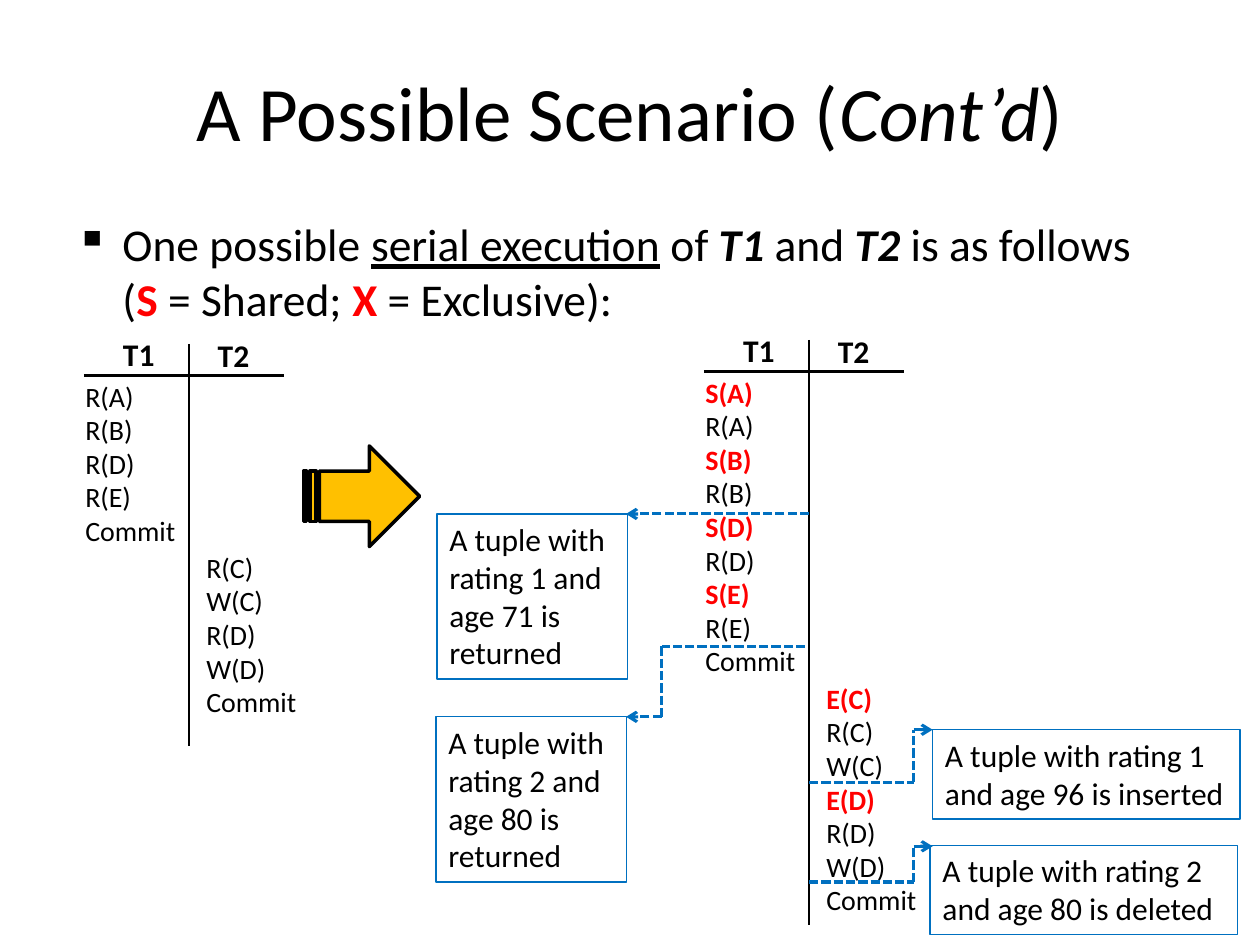
import pptx
import pptx.util
import pptx.dml.color
import pptx.enum.dml
import pptx.enum.shapes
import pptx.enum.text
import pptx.oxml
import pptx.oxml.ns
from itertools import pairwise

Cm, Pt = pptx.util.Cm, pptx.util.Pt
BLACK, RED, BLUE, AMBER = "000000", "FF0000", "0070C0", "FFC000"
BREAK = ("\n", {})

# Content: a paragraph is a list of (text, format values)
title = [("A Possible Scenario (", {}), ("Cont’d", {"italic": True}), (")", {})]
statement = [
    ("One possible ", {}), ("serial execution", {"underline": True}), (" of ", {}),
    ("T1", {"bold": True, "italic": True}), (" and ", {}),
    ("T2", {"bold": True, "italic": True}), (" is as follows ", {}), BREAK,
    ("(", {}), ("S", {"bold": True, "color": RED}), (" = Shared; ", {}),
    ("X", {"bold": True, "color": RED}), (" = Exclusive):", {}),
]
# Schedules: divider x, header line y, divider bottom, T1 steps, T2 steps
schedules = [
    (3.81, 7.57, 15.04, "R(A) R(B) R(D) R(E) Commit", "R(C) W(C) R(D) W(D) Commit"),
    (16.31, 7.49, 18.64, "S(A) R(A) S(B) R(B) S(D) R(D) S(E) R(E) Commit",
     "E(C) R(C) W(C) E(D) R(D) W(D) Commit"),
]
# Notes: left, top, width, height, paragraphs
notes = [
    (8.81, 10.36, 3.84, 3.33, [[("A tuple with ", {}), BREAK, ("rating 1 and ", {}), BREAK,
                                ("age 71 is ", {}), BREAK, ("returned", {})]]),
    (8.79, 14.45, 3.84, 3.33, [[("A tuple with ", {}), BREAK, ("rating 2 and ", {}), BREAK,
                                ("age 80 is ", {}), BREAK, ("returned", {})]]),
    (18.8, 14.71, 6.2, 1.8, [[("A tuple with rating 1", {})], [("and age 96 is inserted", {})]]),
    (18.75, 17.04, 6.2, 1.8, [[("A tuple with rating 2", {})], [("and age 80 is deleted", {})]]),
]
# Dashed routes from a schedule to a note
routes = [
    [(16.31, 10.36), (12.62, 10.36)],
    [(16.23, 13.03), (13.34, 13.03), (13.34, 14.45), (12.62, 14.45)],
    [(16.31, 15.77), (18.42, 15.77), (18.42, 14.71), (18.8, 14.71)],
    [(16.31, 17.78), (18.42, 17.78), (18.42, 17.06), (18.8, 17.06)],
]
STEP_HEIGHT = 0.68

presentation = pptx.Presentation()
presentation.slide_width, presentation.slide_height = Cm(25.4), Cm(19.05)
slide = presentation.slides.add_slide(presentation.slide_layouts[6])


def rgb(value):
    return pptx.dml.color.RGBColor.from_string(value)


def write(shape, paragraphs, size, wrap=False, anchor="TOP", align="LEFT"):
    frame = shape.text_frame
    frame.word_wrap = wrap
    frame.vertical_anchor = getattr(pptx.enum.text.MSO_ANCHOR, anchor)
    for index, pieces in enumerate(paragraphs):
        paragraph = frame.add_paragraph() if index else frame.paragraphs[0]
        paragraph.alignment = getattr(pptx.enum.text.PP_ALIGN, align)
        for text, formats in pieces:
            if text == "\n":
                paragraph.add_line_break()
                continue
            run = paragraph.add_run()
            run.text = text
            values = {"name": "Calibri", "size": Pt(size), "color": BLACK, **formats}
            run.font.color.rgb = rgb(values.pop("color"))
            for key, value in values.items():
                setattr(run.font, key, value)


def add_text(left, top, width, height, paragraphs, size, **options):
    box = slide.shapes.add_textbox(Cm(left), Cm(top), Cm(width), Cm(height))
    write(box, paragraphs, size, **options)
    return box


def add_shape(kind, left, top, width, height, line, weight, fill=None):
    shape = slide.shapes.add_shape(
        getattr(pptx.enum.shapes.MSO_SHAPE, kind), Cm(left), Cm(top), Cm(width), Cm(height))
    shape.shadow.inherit = False
    shape.line.color.rgb = rgb(line)
    shape.line.width = Pt(weight)
    if fill:
        shape.fill.solid()
        shape.fill.fore_color.rgb = rgb(fill)
    else:
        shape.fill.background()
    return shape


def add_line(start, end, color=BLACK, weight=1.5, dashed=False, arrow=False):
    line = slide.shapes.add_connector(
        pptx.enum.shapes.MSO_CONNECTOR.STRAIGHT, *(Cm(v) for v in (*start, *end)))
    line.line.color.rgb = rgb(color)
    line.line.width = Pt(weight)
    if dashed:
        line.line.dash_style = pptx.enum.dml.MSO_LINE.SQUARE_DOT
    if arrow:
        tail = pptx.oxml.parse_xml(
            f'<a:tailEnd {pptx.oxml.ns.nsdecls("a")} type="arrow"/>')
        line.line._get_or_add_ln().append(tail)
    line._element.spPr.append(
        pptx.oxml.parse_xml(f'<a:effectLst {pptx.oxml.ns.nsdecls("a")}/>'))


def step_paragraphs(steps):
    lock = {"bold": True, "color": RED}
    return [[(step, lock if step[:2] in ("S(", "E(") else {})] for step in steps]


# Title and bulleted statement
add_text(1.27, 0.64, 22.86, 3.18, [title], 44, wrap=True, anchor="MIDDLE", align="CENTER")
body = add_text(1.27, 4.24, 22.86, 2.6, [statement], 26, wrap=True)
bullet = body.text_frame.paragraphs[0]
bullet.space_before = Pt(5.2)
bullet_properties = bullet._p.get_or_add_pPr()
for key, value in {"marL": Cm(0.95), "indent": -Cm(0.95)}.items():
    bullet_properties.set(key, str(int(value)))
bullet_properties.append(
    pptx.oxml.parse_xml(f'<a:buChar {pptx.oxml.ns.nsdecls("a")} char="▪"/>'))

# Schedules: T2 starts on the row after the last T1 step
for x, y, bottom, first, second in schedules:
    first, second = first.split(), second.split()
    add_line((x, y - 0.64), (x, bottom))
    add_line((x - 2.12, y), (x + 1.91, y))
    for name, shift, rise in (("T1", -1.58, 0.94), ("T2", 0.33, 0.92)):
        add_text(x + shift, y - rise, 1.14, 1.02, [[(name, {"bold": True})]], 18)
    for steps, shift, top in ((first, -2.34, y - 0.05),
                              (second, 0.1, y + len(first) * STEP_HEIGHT)):
        add_text(x + shift, top, 2.34, len(steps) * STEP_HEIGHT + 0.25,
                 step_paragraphs(steps), 16)

# Arrow between the schedules
add_shape("STRIPED_RIGHT_ARROW", 6.12, 8.99, 2.34, 2.03, BLACK, 2, AMBER)

# Notes and the routes that lead to them
for *place, paragraphs in notes:
    write(add_shape("RECTANGLE", *place, BLUE, 0.75), paragraphs, 18)
for route in routes:
    for start, end in pairwise(route):
        add_line(start, end, BLUE, 1.75, dashed=True, arrow=end == route[-1])

presentation.save("out.pptx")
